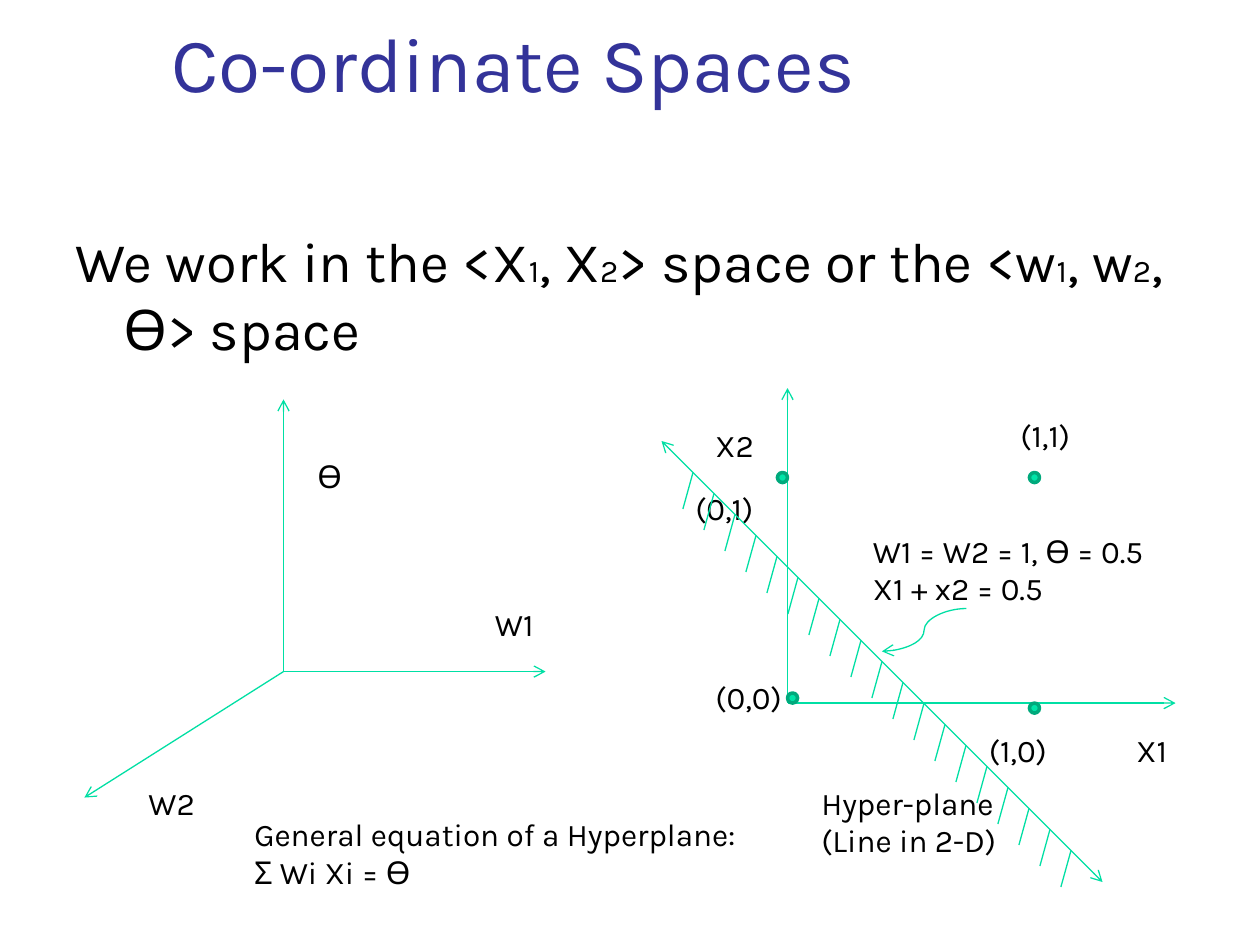
import pptx
import pptx.util
import pptx.dml.color
import pptx.enum.shapes
import pptx.enum.text
import pptx.oxml.ns
import lxml.etree

Inches = pptx.util.Inches
Pt = pptx.util.Pt
CONNECTOR = pptx.enum.shapes.MSO_CONNECTOR
FONT = "Karla"
COLORS = {"title": "333399", "text": "000000", "line": "00DFA4",
          "point": "00E4A8", "point_edge": "00A97C"}


def rgb(name):
    """Return the named colour."""
    return pptx.dml.color.RGBColor.from_string(COLORS[name])


def add_run(paragraph, words, size, color="text"):
    """Append one formatted run."""
    run = paragraph.add_run()
    run.text = words
    run.font.name = FONT
    run.font.size = Pt(size)
    run.font.color.rgb = rgb(color)


def add_label(slide, box, *lines):
    """Add a text box with one paragraph per line."""
    frame = slide.shapes.add_textbox(*map(Inches, box)).text_frame
    frame.word_wrap = True
    for index, words in enumerate(lines):
        paragraph = frame.add_paragraph() if index else frame.paragraphs[0]
        add_run(paragraph, words, 18)


def add_line(slide, start, end, arrows=(), kind=CONNECTOR.STRAIGHT):
    """Draw a thin connector with arrowheads at the named ends."""
    line = slide.shapes.add_connector(kind, *map(Inches, (*start, *end)))
    line.line.color.rgb = rgb("line")
    line.line.width = Pt(0.75)
    qn = pptx.oxml.ns.qn
    for end_name in arrows:
        lxml.etree.SubElement(line.line._get_or_add_ln(), qn(f"a:{end_name}"), type="arrow")
    properties = line._element.find(qn("p:spPr"))
    lxml.etree.SubElement(properties, qn("a:effectLst"))


def add_point(slide, left, top):
    """Mark a point of the plane with a small dot."""
    size = Inches(0.08)
    dot = slide.shapes.add_shape(pptx.enum.shapes.MSO_SHAPE.OVAL,
                                 Inches(left), Inches(top), size, size)
    dot.shadow.inherit = False
    dot.fill.solid()
    dot.fill.fore_color.rgb = rgb("point")
    dot.line.color.rgb = rgb("point_edge")
    dot.line.width = Pt(2)


def place(placeholder, box):
    """Move a placeholder into its box and return its text frame."""
    placeholder.left, placeholder.top, placeholder.width, placeholder.height = map(Inches, box)
    frame = placeholder.text_frame
    frame.word_wrap = True
    frame.auto_size = pptx.enum.text.MSO_AUTO_SIZE.NONE
    frame.paragraphs[0].alignment = pptx.enum.text.PP_ALIGN.LEFT
    return frame


def fill_title(slide, box):
    """Write the slide title."""
    frame = place(slide.shapes.title, box)
    frame.vertical_anchor = pptx.enum.text.MSO_ANCHOR.BOTTOM
    add_run(frame.paragraphs[0], "Co-ordinate Spaces", 44, "title")


def fill_statement(slide, box):
    """Write the statement with its small indices and hanging indent."""
    paragraph = place(slide.placeholders[1], box).paragraphs[0]
    paragraph.space_before = Pt(6.4)
    properties = paragraph._p.get_or_add_pPr()
    properties.set("marL", str(Inches(0.38)))
    properties.set("indent", str(-Inches(0.38)))
    lxml.etree.SubElement(properties, pptx.oxml.ns.qn("a:buNone"))
    pieces = ["We work in the <X", "1", ", X", "2", "> space or the <w",
              "1", ", w", "2", ", Ѳ> space"]
    for piece in pieces:
        add_run(paragraph, piece, 18 if piece.isdigit() else 32)


def draw_weight_space(slide, box):
    """Draw the three axes of the weight space."""
    left, top, width, height = box
    origin = (left + 1.58, top + 2.16)
    tips = [(origin[0], top), (left, top + height), (left + width, origin[1])]
    for tip in tips:
        add_line(slide, origin, tip, ["tailEnd"])
    for name, x, y in [("W2", 0.41, 3), ("W1", 3.16, 1.58), ("Ѳ", 1.75, 0.41)]:
        add_label(slide, (left + x, top + y, 0.58, 0.4), name)


def draw_input_space(slide, box):
    """Draw the input plane, its four points and the separating line."""
    left, top, width, height = box
    origin = (left + 1, top + 2.5)
    for tip in [(origin[0], top), (left + width, origin[1])]:
        add_line(slide, origin, tip, ["tailEnd"])
    for name, x, y in [("X1", 3.67, 2.67), ("X2", 0.33, 0.25)]:
        add_label(slide, (left + x, top + y, 0.58, 0.4), name)
    points = [("(0,0)", 1, 2.42, 0.33, 2.25), ("(1,0)", 2.92, 2.5, 2.5, 2.67),
              ("(0,1)", 0.92, 0.67, 0.17, 0.75), ("(1,1)", 2.92, 0.67, 2.75, 0.17)]
    for name, dot_x, dot_y, x, y in points:
        add_point(slide, left + dot_x, top + dot_y)
        add_label(slide, (left + x, top + y, 0.75, 0.4), name)
    draw_hyperplane(slide, (left, top + 0.42, 3.5, height - 0.42))
    add_label(slide, (left + 1.17, top + 3.09, 2, 0.71), "Hyper-plane", "(Line in 2-D)")
    add_label(slide, (left + 1.58, top + 1.09, 2.58, 1.01),
              "W1 = W2 = 1, Ѳ = 0.5", "X1 + x2 = 0.5")
    add_line(slide, (left + 2.42, top + 1.75), (left + 1.75, top + 2.09),
             ["tailEnd"], CONNECTOR.CURVE)


def draw_hyperplane(slide, box):
    """Draw the diagonal with evenly spaced hatching on its lower side."""
    left, top, width, height = box
    add_line(slide, (left, top), (left + width, top + height), ["headEnd", "tailEnd"])
    for index in range(19):
        offset = 0.25 + index / 6
        x, y = left + offset, top + offset
        add_line(slide, (x, y), (x - 0.08, y + 0.29))


def main():
    """Build and save the slide."""
    deck = pptx.Presentation()
    deck.slide_width, deck.slide_height = Inches(10), Inches(7.5)
    slide = deck.slides.add_slide(deck.slide_layouts[1])
    fill_title(slide, (1.26, 0.23, 8.52, 0.68))
    fill_statement(slide, (0.5, 1.75, 9, 1.33))
    draw_weight_space(slide, (0.67, 3.17, 3.66, 3.16))
    draw_input_space(slide, (5.25, 3.08, 4.08, 3.92))
    add_label(slide, (1.92, 6.42, 4.33, 0.71),
              "General equation of a Hyperplane:", "Σ Wi Xi = Ѳ")
    deck.save("out.pptx")


if __name__ == "__main__":
    main()
